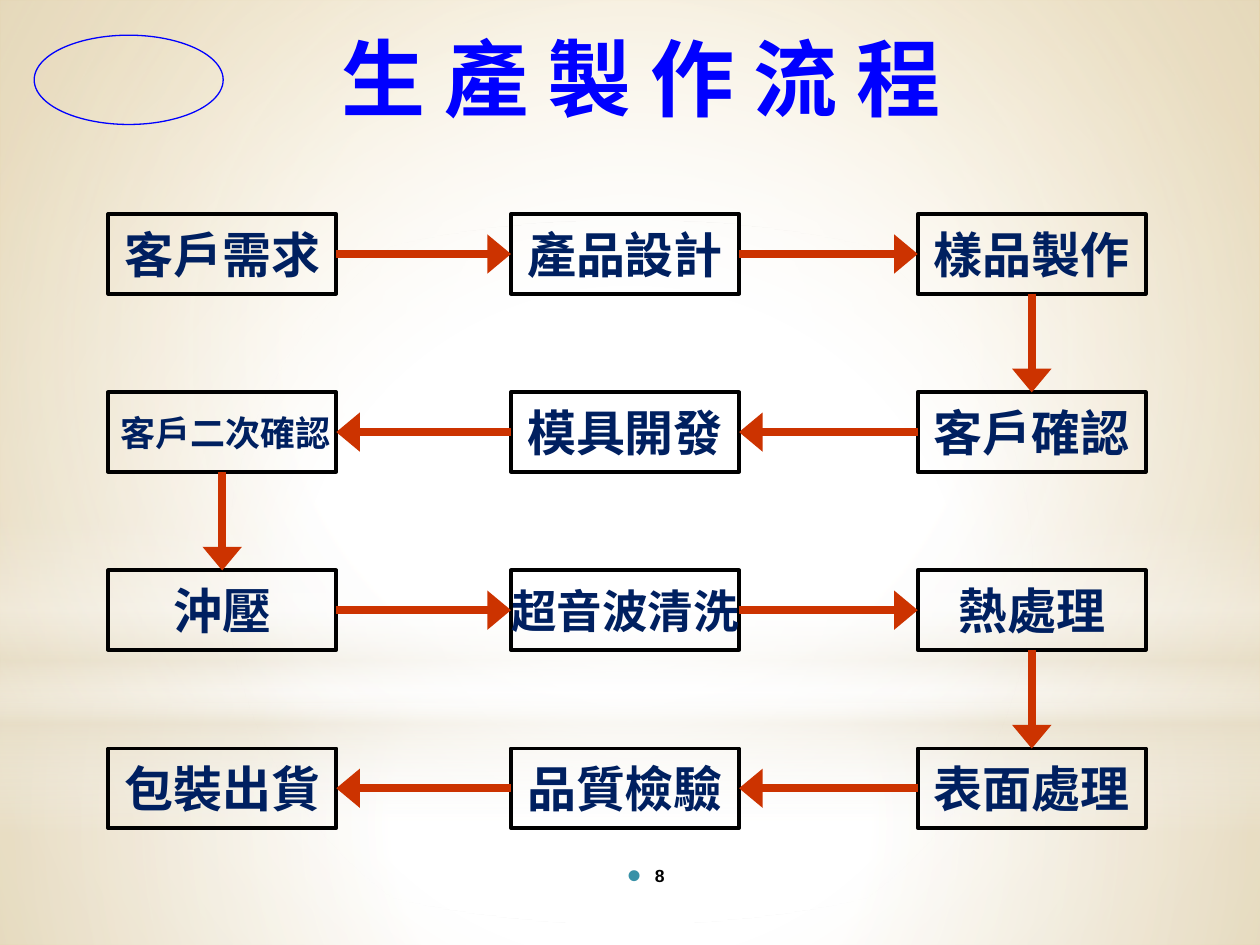
from lxml.etree import SubElement
from pptx import Presentation
from pptx.dml.color import RGBColor
from pptx.enum.shapes import MSO_CONNECTOR, MSO_SHAPE
from pptx.enum.text import MSO_ANCHOR, PP_ALIGN
from pptx.oxml.ns import qn
from pptx.util import Cm, Pt

BLUE = RGBColor(0x00, 0x00, 0xFF)
NAVY = RGBColor(0x00, 0x20, 0x60)
BLACK = RGBColor(0x00, 0x00, 0x00)
RED = RGBColor(0xCC, 0x33, 0x00)
TEAL = RGBColor(0x38, 0x91, 0xA7)
WHITE = RGBColor(0xFF, 0xFF, 0xFF)
CREAM = RGBColor(0xE7, 0xDE, 0xC9)
SAND = RGBColor(0xDF, 0xC4, 0x85)

CHINESE = "Noto Sans CJK SC"
LATIN = "Arial"

COLUMN_LEFTS = (2.18, 10.3, 18.5)
FIRST_TOP, ROW_STEP = 4.32, 3.59
BOX_WIDTH, BOX_HEIGHT = 4.6, 1.6
TOP, LEFT, BOTTOM, RIGHT = range(4)

STEP_ROWS = (
    ("客戶需求", "產品設計", "樣品製作"),
    ("客戶確認", "模具開發", "客戶二次確認"),
    ("沖壓", "超音波清洗", "熱處理"),
    ("表面處理", "品質檢驗", "包裝出貨"),
)
STEP_FORMATS = {
    "客戶二次確認": {"size": Pt(20), "align": PP_ALIGN.LEFT},
    "超音波清洗": {"size": Pt(26)},
}

CENTRE = (50, 50, 50, 50)
PANELS = (
    (MSO_SHAPE.RECTANGLE, (0, 14.17, 25.4, 4.88),
     ((0, WHITE, 91), (37, WHITE, 76), (100, CREAM, 79)), CENTRE),
    (MSO_SHAPE.RECTANGLE, (0, 0, 25.4, 14.17),
     ((0, WHITE, 89), (48, WHITE, 62), (100, CREAM, 79)), CENTRE),
    (MSO_SHAPE.RECTANGLE, (0, 10.46, 25.4, 6.35),
     ((0, WHITE, 0), (29, WHITE, 30), (45, CREAM, 40),
      (55, WHITE, 26), (65, CREAM, 60), (100, WHITE, 0)), None),
    (MSO_SHAPE.OVAL, (0, 4.45, 25.4, 14.17),
     ((0, WHITE, 100), (56, WHITE, 0)), CENTRE),
)


def set_all(target, values):
    for name, value in values.items():
        setattr(target, name, value)


def place(shape, area):
    set_all(shape, dict(zip(("left", "top", "width", "height"), map(Cm, area))))


def paint_gradient(fill, owner, stops, focus=None):
    fill.gradient()
    gradient = owner.find(".//" + qn("a:gradFill"))
    for child in list(gradient):
        gradient.remove(child)
    stop_list = SubElement(gradient, qn("a:gsLst"))
    for position, color, opacity in stops:
        stop = SubElement(stop_list, qn("a:gs"), pos=str(position * 1000))
        tint = SubElement(stop, qn("a:srgbClr"), val=str(color))
        SubElement(tint, qn("a:alpha"), val=str(opacity * 1000))
    if focus:
        route = SubElement(gradient, qn("a:path"), path="circle")
        edges = {side: str(part * 1000) for side, part in zip("ltrb", focus)}
        SubElement(route, qn("a:fillToRect"), edges)
    else:
        SubElement(gradient, qn("a:lin"), ang="5400000", scaled="0")


def write_text(shape, text, font, size, color, align=PP_ALIGN.CENTER,
               anchor=MSO_ANCHOR.MIDDLE, wrap=False):
    set_all(shape.text_frame, {"word_wrap": wrap, "vertical_anchor": anchor})
    para = shape.text_frame.paragraphs[0]
    para.alignment = align
    span = para.add_run()
    span.text = text
    set_all(span.font, {"name": font, "size": size, "bold": True})
    span.font.color.rgb = color
    SubElement(span.font._element, qn("a:ea"), typeface=font)
    return para


def add_panel(page, kind, area, stops, focus):
    panel = page.shapes.add_shape(kind, *map(Cm, area))
    panel.shadow.inherit = False
    panel.line.fill.background()
    paint_gradient(panel.fill, panel._element, stops, focus)


def add_outline(page, kind, area, color, weight):
    box = page.shapes.add_shape(kind, *map(Cm, area))
    box.shadow.inherit = False
    box.fill.background()
    box.line.color.rgb = color
    box.line.width = Pt(weight)
    return box


def add_step(page, text, row, column):
    area = (COLUMN_LEFTS[column], FIRST_TOP + row * ROW_STEP, BOX_WIDTH, BOX_HEIGHT)
    box = add_outline(page, MSO_SHAPE.RECTANGLE, area, BLACK, 2.25)
    values = {"size": Pt(28), **STEP_FORMATS.get(text, {})}
    write_text(box, text, CHINESE, color=NAVY, **values)
    return box


def add_arrow(page, start, start_side, end, end_side):
    arrow = page.shapes.add_connector(MSO_CONNECTOR.STRAIGHT, 0, 0, 0, 0)
    arrow.begin_connect(start, start_side)
    arrow.end_connect(end, end_side)
    arrow.line.color.rgb = RED
    arrow.line.width = Pt(4.5)
    SubElement(arrow.line._get_or_add_ln(), qn("a:tailEnd"), type="triangle", w="lg")
    SubElement(arrow._element.spPr, qn("a:effectLst"))


def add_flow(page):
    steps = []
    for row, texts in enumerate(STEP_ROWS):
        for order, text in enumerate(texts):
            column = 2 - order if row % 2 else order
            steps.append((add_step(page, text, row, column), row))
    for (start, row), (end, next_row) in zip(steps, steps[1:]):
        if row != next_row:
            sides = BOTTOM, TOP
        elif row % 2:
            sides = LEFT, RIGHT
        else:
            sides = RIGHT, LEFT
        add_arrow(page, start, sides[0], end, sides[1])


def add_page_number(page, text):
    box = page.shapes.add_textbox(*map(Cm, (10.48, 17.15, 5.08, 1.02)))
    para = write_text(box, text, LATIN, Pt(10), BLACK, wrap=True)
    properties = para._p.get_or_add_pPr()
    indents = {"marL": Cm(0.56), "indent": Cm(-0.56)}
    for name, value in indents.items():
        properties.set(name, str(int(value)))
    color = SubElement(properties, qn("a:buClr"))
    SubElement(color, qn("a:srgbClr"), val=str(TEAL))
    SubElement(properties, qn("a:buSzPct"), val="230000")
    SubElement(properties, qn("a:buFont"), typeface=LATIN)
    SubElement(properties, qn("a:buChar"), char="•")


def main():
    deck = Presentation()
    set_all(deck, {"slide_width": Cm(25.4), "slide_height": Cm(19.05)})
    page = deck.slides.add_slide(deck.slide_layouts[5])
    paint_gradient(page.background.fill, page._element,
                   ((0, WHITE, 100), (42, WHITE, 100), (100, SAND, 100)),
                   (24, 44, 24, 12))
    for panel in PANELS:
        add_panel(page, *panel)
    title = page.shapes.title
    place(title, (1.5, 0.41, 22.86, 2.77))
    write_text(title, "生 產 製 作 流 程", CHINESE, Pt(48), BLUE,
               anchor=MSO_ANCHOR.TOP, wrap=True)
    page.shapes._spTree.append(title._element)
    add_outline(page, MSO_SHAPE.OVAL, (0.69, 0.71, 3.81, 1.8), BLUE, 0.75)
    add_flow(page)
    add_page_number(page, "8")
    deck.save("out.pptx")


if __name__ == "__main__":
    main()
